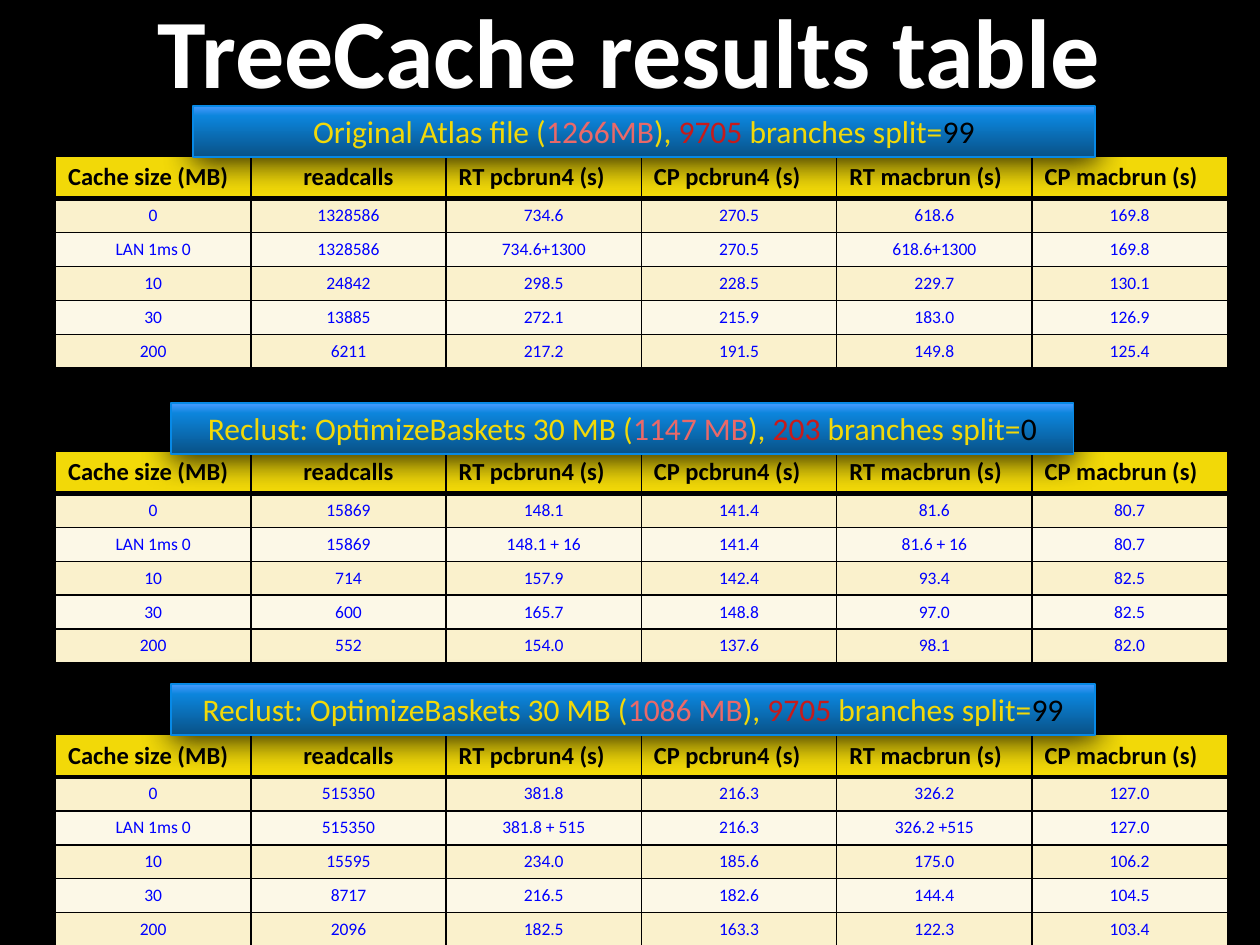
from copy import deepcopy
from lxml.etree import SubElement
from pptx import Presentation
from pptx.dml.color import RGBColor
from pptx.enum.shapes import MSO_SHAPE
from pptx.enum.text import MSO_ANCHOR, MSO_AUTO_SIZE, PP_ALIGN
from pptx.oxml.ns import qn
from pptx.util import Pt

COLORS = {
    "black": "000000", "white": "FFFFFF", "gold": "F2D908", "cream": "FAF1CC",
    "pale": "FCF8E7", "ink": "0000FF", "pink": "EA6969", "red": "C61B1B",
    "edge": "0789E6", "deep": "085288", "mid": "0C85DC", "light": "489AFF",
}
HEADS = ["Cache size (MB)", "readcalls", "RT pcbrun4 (s)",
         "CP pcbrun4 (s)", "RT macbrun (s)", "CP macbrun (s)"]
SIZES = ["0", "LAN 1ms 0", "10", "30", "200"]
TESTS = [
    (89.28, (110.16, 60.48, 515.52), ("Original Atlas file (", "1266MB", "9705", "99"), [
        ["1328586", "734.6", "270.5", "618.6", "169.8"],
        ["1328586", "734.6+1300", "270.5", "618.6+1300", "169.8"],
        ["24842", "298.5", "228.5", "229.7", "130.1"],
        ["13885", "272.1", "215.9", "183.0", "126.9"],
        ["6211", "217.2", "191.5", "149.8", "125.4"]]),
    (257.76, (97.92, 230.4, 515.52),
     ("Reclust: OptimizeBaskets 30 MB (", "1147 MB", "203", "0"), [
        ["15869", "148.1", "141.4", "81.6", "80.7"],
        ["15869", "148.1 + 16", "141.4", "81.6 + 16", "80.7"],
        ["714", "157.9", "142.4", "93.4", "82.5"],
        ["600", "165.7", "148.8", "97.0", "82.5"],
        ["552", "154.0", "137.6", "98.1", "82.0"]]),
    (419.76, (97.92, 390.96, 527.76),
     ("Reclust: OptimizeBaskets 30 MB (", "1086 MB", "9705", "99"), [
        ["515350", "381.8", "216.3", "326.2", "127.0"],
        ["515350", "381.8 + 515", "216.3", "326.2 +515", "127.0"],
        ["15595", "234.0", "185.6", "175.0", "106.2"],
        ["8717", "216.5", "182.6", "144.4", "104.5"],
        ["2096", "182.5", "163.3", "122.3", "103.4"]]),
]


def rgb(name):
    return RGBColor.from_string(COLORS[name])


def style(font, size, color, bold=False):
    font.name, font.size, font.bold = "Calibri", Pt(size), bold
    font.color.rgb = rgb(color)


deck = Presentation()
deck.slide_width, deck.slide_height = Pt(720), Pt(540)
slide = deck.slides.add_slide(deck.slide_layouts[5])
slide.background.fill.solid()
slide.background.fill.fore_color.rgb = rgb("black")

title = slide.shapes.title
title.left, title.top, title.width, title.height = Pt(61.2), Pt(8.64), Pt(596.88), Pt(38.88)
title.text_frame.text = "TreeCache results table"
title.text_frame.auto_size = MSO_AUTO_SIZE.NONE
title.text_frame.vertical_anchor = MSO_ANCHOR.MIDDLE
para = title.text_frame.paragraphs[0]
para.alignment = PP_ALIGN.CENTER
style(para.font, 56, "white", True)

for top, place, label, data in TESTS:
    rows = [HEADS] + [[size] + vals for size, vals in zip(SIZES, data)]
    grid = slide.shapes.add_table(6, 6, Pt(31.68), Pt(top), Pt(669.6), Pt(112.3)).table
    for r, row in enumerate(rows):
        head = r == 0
        grid.rows[r].height = Pt(22.3 if head else 18)
        for c, text in enumerate(row):
            cell = grid.cell(r, c)
            cell.text = text
            para = cell.text_frame.paragraphs[0]
            para.alignment = PP_ALIGN.LEFT if head and c != 1 else PP_ALIGN.CENTER
            style(para.font, 14 if head else 10, "black" if head else "ink", head)
            props = cell._tc.get_or_add_tcPr()
            for side in "LRTB":
                thick = (r, side) in [(0, "B"), (1, "T")]
                line = SubElement(props, qn("a:ln" + side), w=str(Pt(3 if thick else 1)))
                paint = SubElement(line, qn("a:solidFill"))
                SubElement(paint, qn("a:srgbClr"), val=COLORS["black"])
            cell.fill.solid()
            cell.fill.fore_color.rgb = rgb("gold" if head else "cream" if r % 2 else "pale")

for top, (left, high, wide), (name, size, count, split), data in reversed(TESTS):
    bar = slide.shapes.add_shape(MSO_SHAPE.RECTANGLE, Pt(left), Pt(high), Pt(wide), Pt(29.08))
    bar.fill.gradient()
    bar.fill.gradient_angle = 90
    stops = bar._element.spPr.find(qn("a:gradFill")).find(qn("a:gsLst"))
    stops.insert(1, deepcopy(stops[0]))
    for stop, spot, hue in zip(bar.fill.gradient_stops, (0, 0.8, 1), ("deep", "mid", "light")):
        stop.position = spot
        stop.color.rgb = rgb(hue)
    bar.line.color.rgb = rgb("edge")
    bar.line.width = Pt(1)
    bar.shadow.inherit = False
    glow = SubElement(bar._element.spPr.find(qn("a:effectLst")), qn("a:outerShdw"),
                      blurRad=str(Pt(18)), dist=str(Pt(3)), dir="5400000", rotWithShape="0")
    shade = SubElement(glow, qn("a:srgbClr"), val=COLORS["black"])
    SubElement(shade, qn("a:alpha"), val="80000")
    frame = bar.text_frame
    frame.word_wrap = True
    frame.auto_size = MSO_AUTO_SIZE.SHAPE_TO_FIT_TEXT
    frame.vertical_anchor = MSO_ANCHOR.TOP
    para = frame.paragraphs[0]
    para.alignment = PP_ALIGN.CENTER
    for text, hue in [(name, "gold"), (size, "pink"), ("), ", "gold"), (count, "red"),
                      (" branches split=", "gold"), (split, "black")]:
        run = para.add_run()
        run.text = text
        style(run.font, 18, hue)

deck.save("out.pptx")
